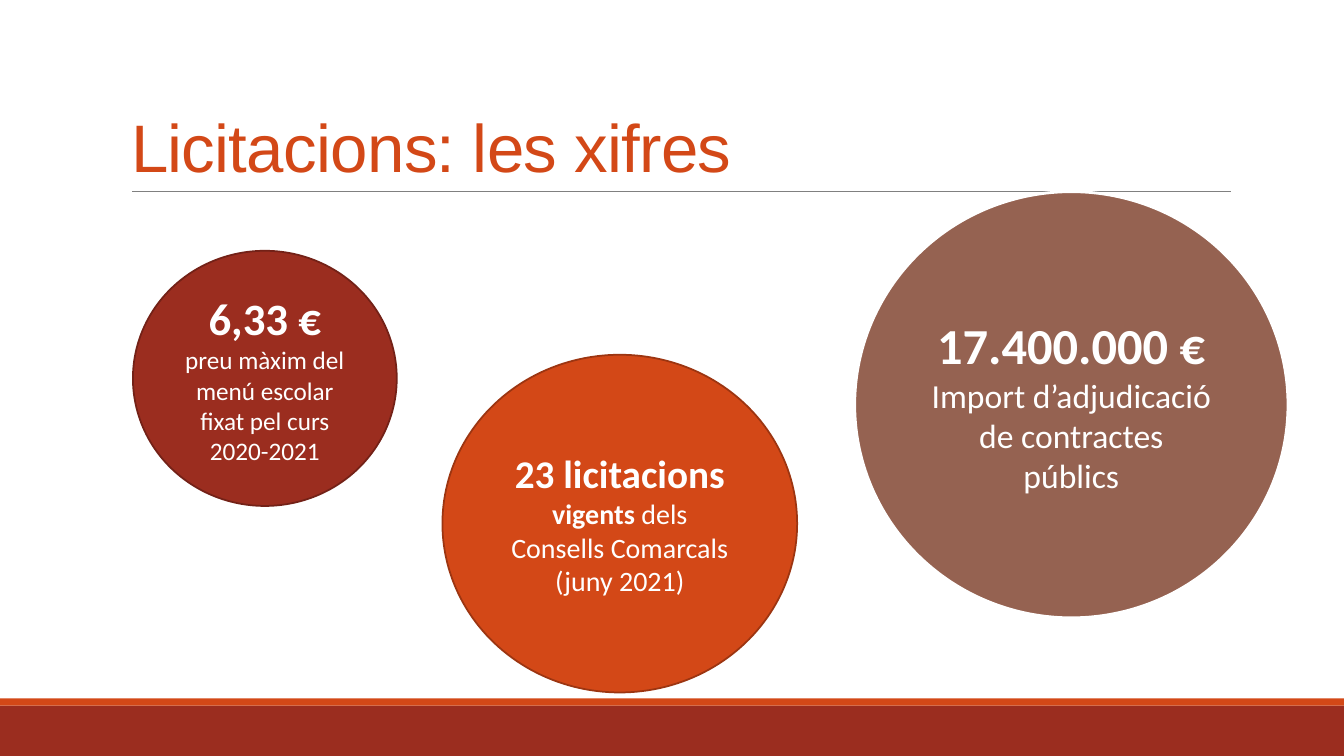
"""Build the slide with the key figures on school-meal tenders."""
from lxml import etree
from pptx import Presentation, util as u
from pptx.dml.color import RGBColor
from pptx.enum import shapes, text
from pptx.oxml.ns import qn

COLORS = {"white": "FFFFFF", "orange": "D34817", "dark_orange": "9C3511", "red": "9B2D1F",
          "dark_red": "732117", "brown": "956251", "grey": "808080"}
SLIDE = (33.87, 19.05)
TITLE = "Licitacions: les xifres"
TITLE_BOX = (3.05, 0.79, 27.94, 4.03)
RULE = (3.33, 4.83, 31.01, 4.83)
BANDS = [("red", 17.78, 1.27), ("orange", 17.6, 0.18)]
CIRCLES = [
    {"box": (21.54, 4.83, 10.92, 10.74), "fill": "brown", "line": ("white", 2),
     "paras": [[("17.400.000 €", 36, True)],
               [("Import d’adjudicació de contractes públics", 24, False)]]},
    {"box": (11.15, 8.94, 8.94, 8.51), "fill": "orange", "line": ("dark_orange", 1.25),
     "paras": [[("23 licitacions", 28, True)],
               [("vigents", 20, True), (" dels Consells Comarcals (juny 2021)", 20, False)]]},
    {"box": (3.35, 6.32, 6.65, 6.43), "fill": "red", "line": ("dark_red", 1.25),
     "paras": [[("6,33 €", 32, True)],
               [("preu màxim del menú escolar fixat pel curs 2020-2021", 18, False)]]},
]


def rgb(name):
    return RGBColor.from_string(COLORS[name])


def cm(values):
    return [u.Cm(v) for v in values]


def apply(obj, **values):
    for name, value in values.items():
        setattr(obj, name, value)


def add_run(p, words, size, color, font, bold=False):
    r = p.add_run()
    r.text = words
    apply(r.font, size=u.Pt(size), name=font, bold=bold)
    r.font.color.rgb = rgb(color)
    return r


def add_shape(s, kind, box, fill, line=None):
    sp = s.shapes.add_shape(kind, *cm(box))
    sp.shadow.inherit = False
    sp.fill.solid()
    sp.fill.fore_color.rgb = rgb(fill)
    if line:
        sp.line.color.rgb = rgb(line[0])
        sp.line.width = u.Pt(line[1])
    else:
        sp.line.fill.background()
    return sp


def add_title(s):
    sp = s.shapes.title
    apply(sp, **dict(zip(("left", "top", "width", "height"), cm(TITLE_BOX))))
    tf = sp.text_frame
    apply(tf, word_wrap=True, auto_size=text.MSO_AUTO_SIZE.NONE,
          vertical_anchor=text.MSO_ANCHOR.BOTTOM)
    p = tf.paragraphs[0]
    apply(p, alignment=text.PP_ALIGN.LEFT, line_spacing=0.85)
    r = add_run(p, TITLE, 48, "orange", "Arial")
    r.font._element.set("spc", "-50")


def add_rule(s):
    line = s.shapes.add_connector(shapes.MSO_CONNECTOR.STRAIGHT, *cm(RULE))
    line.line.color.rgb = rgb("grey")
    line.line.width = u.Pt(0.5)
    etree.SubElement(line._element.spPr, qn("a:effectLst"))


def add_circle(s, box, fill, line, paras):
    tf = add_shape(s, shapes.MSO_SHAPE.OVAL, box, fill, line).text_frame
    apply(tf, word_wrap=True, vertical_anchor=text.MSO_ANCHOR.MIDDLE)
    for i, runs in enumerate(paras):
        p = tf.add_paragraph() if i else tf.paragraphs[0]
        p.alignment = text.PP_ALIGN.CENTER
        for words, size, bold in runs:
            add_run(p, words, size, "white", "Calibri", bold)


def main():
    prs = Presentation()
    prs.slide_width, prs.slide_height = cm(SLIDE)
    s = prs.slides.add_slide(prs.slide_layouts[5])
    for fill, top, height in BANDS:
        add_shape(s, shapes.MSO_SHAPE.RECTANGLE, (0, top, SLIDE[0], height), fill)
    add_rule(s)
    add_title(s)
    for circle in CIRCLES:
        add_circle(s, **circle)
    prs.save("out.pptx")


if __name__ == "__main__":
    main()
